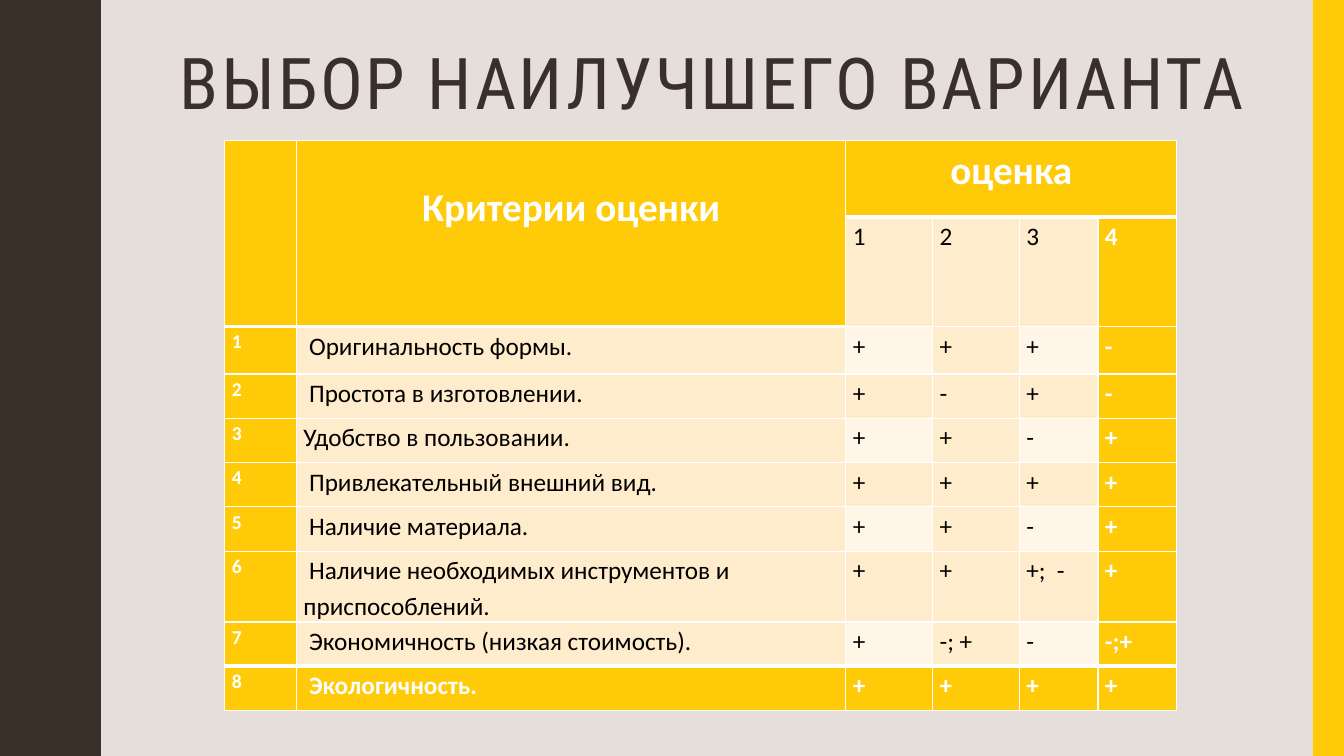
from lxml import etree
from pptx import Presentation, util as u
from pptx.dml.color import RGBColor
from pptx.enum import shapes, text
from pptx.oxml import ns

theme = {
    "paper": RGBColor.from_string("E5DEDB"), "dark": RGBColor.from_string("39302A"),
    "gold": RGBColor.from_string("FFCA08"), "cream": RGBColor.from_string("FFECCC"),
    "pale": RGBColor.from_string("FFF6E7"), "white": RGBColor.from_string("FFFFFF"),
    "black": RGBColor.from_string("000000"),
    "title_font": "Roboto Condensed", "body_font": "Calibri",
    "title": u.Pt(51), "header": u.Pt(28), "body": u.Pt(18), "number": u.Pt(14),
}


def paint(shape, color):
    shape.shadow.inherit = False
    shape.fill.solid()
    shape.fill.fore_color.rgb = color
    shape.line.fill.background()


def write(frame, words, color, line_spacing, align, **font_format):
    paragraph = frame.paragraphs[0]
    paragraph.text = words
    paragraph.line_spacing = line_spacing
    paragraph.alignment = align
    font = paragraph.runs[0].font
    font.color.rgb = color
    for name, value in font_format.items():
        setattr(font, name, value)
    return paragraph


deck = Presentation()
deck.slide_width, deck.slide_height = u.Inches(13.33), u.Inches(7.5)
W, H = deck.slide_width, deck.slide_height
slide = deck.slides.add_slide(deck.slide_layouts[5])
slide.background.fill.solid()
slide.background.fill.fore_color.rgb = theme["paper"]

# Wavy left edge: half a wave, mirrored and repeated five times
half_wave = [(0.78, 0), (0.78, 0.07), (0.79, 0.14), (0.8, 0.2), (0.81, 0.25),
             (0.83, 0.29), (0.85, 0.33), (0.87, 0.38), (0.89, 0.42), (0.91, 0.46),
             (0.93, 0.5), (0.95, 0.55), (0.96, 0.61), (0.97, 0.68), (0.97, 0.75)]
period = 1.5
wave = half_wave + [(x, period - y) for x, y in reversed(half_wave[:-1])]
edge = [(x, y + period * turn) for turn in range(5) for x, y in wave]
outline = slide.shapes.build_freeform(0, 0, scale=u.Inches(1))
outline.add_line_segments(edge + [(0, 7.5)], close=True)
paint(outline.convert_to_shape(), theme["dark"])

# Gold right edge
gold_width = u.Inches(0.31)
paint(slide.shapes.add_shape(shapes.MSO_SHAPE.RECTANGLE, W - gold_width, 0, gold_width, H),
      theme["gold"])

# Title
heading = slide.shapes.title
heading.left, heading.top, heading.width, heading.height = map(
    u.Inches, (1.64, 0.42, 10.86, 0.98))
frame_format = {"margin_left": 0, "margin_right": 0, "word_wrap": True,
                "vertical_anchor": text.MSO_ANCHOR.TOP, "auto_size": text.MSO_AUTO_SIZE.NONE}
for name, value in frame_format.items():
    setattr(heading.text_frame, name, value)
title_line = write(heading.text_frame, "ВЫБОР НАИЛУЧШЕГО ВАРИАНТА", theme["dark"], 0.9,
                   text.PP_ALIGN.CENTER, name=theme["title_font"], size=theme["title"])
title_line.runs[0].font._element.set("spc", "200")

# Criteria and the marks of the four variants
criteria = [
    (" Оригинальность формы.", "+", "+", "+", "-"),
    (" Простота в изготовлении.", "+", "-", "+", "-"),
    ("Удобство в пользовании.", "+", "+", "-", "+"),
    (" Привлекательный внешний вид.", "+", "+", "+", "+"),
    (" Наличие материала.", "+", "+", "-", "+"),
    (" Наличие необходимых инструментов и приспособлений.", "+", "+", "+;  -", "+"),
    (" Экономичность (низкая стоимость).", "+", "-; +", "-", "-;+"),
    (" Экологичность.", "+", "+", "+", "+"),
]
rows = [("", "Критерии оценки", "оценка", "", "", ""), ("", "", "1", "2", "3", "4")]
rows += [(str(number), *line) for number, line in enumerate(criteria, 1)]
last_row, last_column = len(rows) - 1, 5

# Table grid
column_widths = [0.71, 5.45, 0.86, 0.86, 0.78, 0.78]
row_heights = [0.76, 1.09, 0.47] + [0.44] * 4 + [0.7] + [0.44] * 2
grid = slide.shapes.add_table(len(rows), len(column_widths), u.Inches(2.23), u.Inches(1.39),
                              u.Inches(sum(column_widths)), u.Inches(sum(row_heights))).table
for column, width in zip(grid.columns, column_widths):
    column.width = u.Inches(width)
for row, height in zip(grid.rows, row_heights):
    row.height = u.Inches(height)
for column in (0, 1):
    grid.cell(0, column).merge(grid.cell(1, column))
grid.cell(0, 2).merge(grid.cell(0, last_column))

# Cells: borders, fills and text
for r, row in enumerate(rows):
    for c, words in enumerate(row):
        cell = grid.cell(r, c)
        header_end = 1 if c < 2 else 0
        thick = {"lnT": r in (header_end + 1, last_row),
                 "lnB": r in (header_end, last_row - 1)}
        for side in ("lnL", "lnR", "lnT", "lnB"):
            border = etree.SubElement(cell._tc.get_or_add_tcPr(), ns.qn("a:" + side),
                                      w=str(u.Pt(3 if thick.get(side) else 1)))
            line_fill = etree.SubElement(border, ns.qn("a:solidFill"))
            etree.SubElement(line_fill, ns.qn("a:srgbClr"), val=str(theme["white"]))

        header = r <= header_end
        strong = header or c in (0, last_column) or r == last_row
        banded = r >= 2 and r % 2 == 0 and c in (2, 4)
        cell.fill.solid()
        cell.fill.fore_color.rgb = theme["gold" if strong else "pale" if banded else "cream"]
        cell.margin_left = cell.margin_right = u.Inches(0.07)
        cell.margin_top = u.Inches(0.37 if header and c == 1 else 0)
        cell.margin_bottom = 0
        if words:
            size = "header" if header else "number" if c == 0 else "body"
            entry = write(cell.text_frame, words, theme["white" if strong else "black"], 1.15,
                          text.PP_ALIGN.CENTER if header else text.PP_ALIGN.LEFT,
                          name=theme["body_font"], size=theme[size], bold=strong)
            entry.space_after = u.Pt(10)

deck.save("out.pptx")
